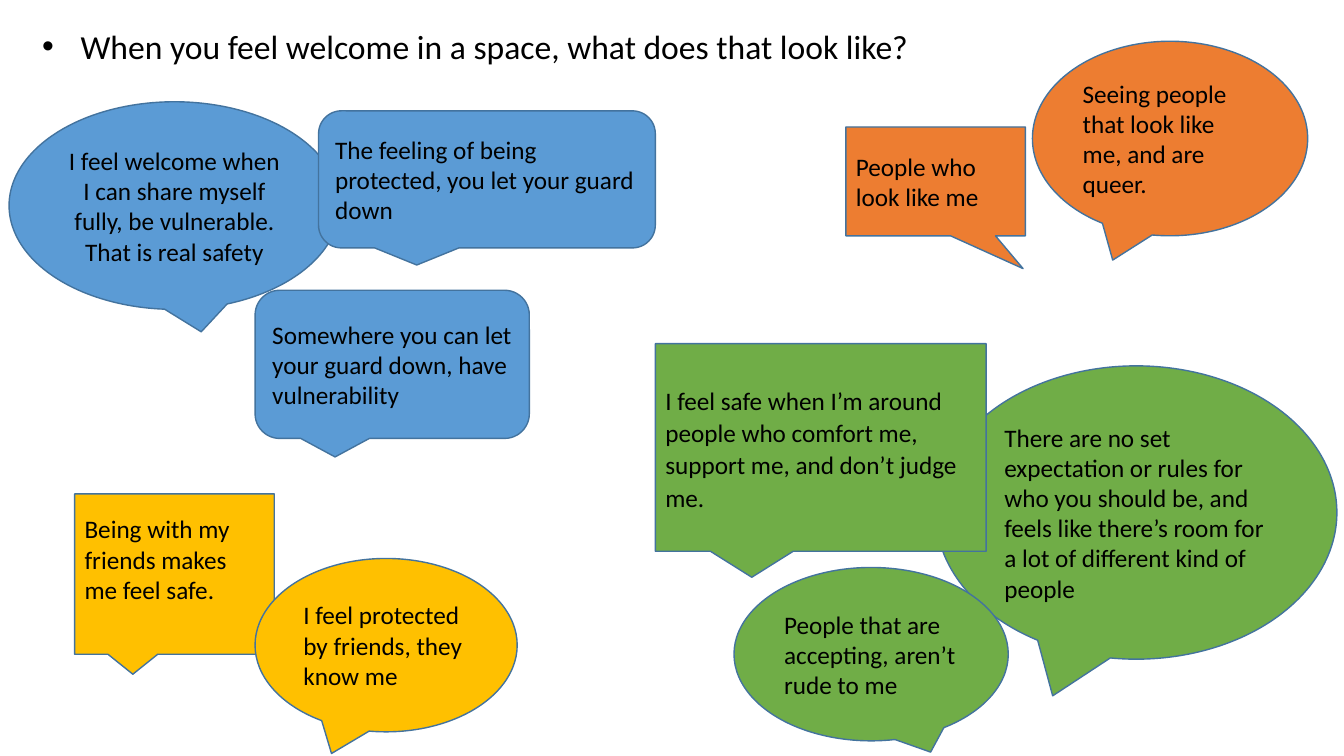
from dataclasses import dataclass

from lxml import etree
from pptx import Presentation
from pptx.dml.color import RGBColor
from pptx.enum.shapes import MSO_SHAPE
from pptx.enum.text import MSO_ANCHOR, PP_ALIGN
from pptx.oxml.ns import qn
from pptx.util import Inches, Pt

RECTANGLE = MSO_SHAPE.RECTANGULAR_CALLOUT
ROUNDED = MSO_SHAPE.ROUNDED_RECTANGULAR_CALLOUT
OVAL = MSO_SHAPE.OVAL_CALLOUT
LEFT, CENTER = PP_ALIGN.LEFT, PP_ALIGN.CENTER
MIDDLE = MSO_ANCHOR.MIDDLE


@dataclass(frozen=True)
class Theme:
    font: str = "Calibri"
    question_size: int = 24
    answer_size: int = 18
    text: str = "000000"
    outline: str = "43739E"
    blue: str = "5B9BD5"
    orange: str = "ED7D31"
    green: str = "70AD47"
    yellow: str = "FFC000"


THEME = Theme()


@dataclass(frozen=True)
class Bubble:
    text: str
    kind: int
    fill: str
    left: float
    top: float
    width: float
    height: float
    tail: tuple[float, float] | None = None  # tip, as a share of the size from the centre
    align: int = LEFT
    line_spacing: float = 1.0
    space_after: int = 0
    bottom_inset: float = 0.05


# Answers, from back to front
BUBBLES = [
    Bubble("Being with my friends makes me feel safe.",
           RECTANGLE, THEME.yellow, 0.74, 4.9, 1.98, 1.59, bottom_inset=0.35),
    Bubble("People who look like me",
           RECTANGLE, THEME.orange, 8.39, 1.26, 1.78, 1.08, tail=(0.487, 0.801)),
    Bubble("There are no set expectation or rules for who you should be, "
           "and feels like there’s room for a lot of different kind of people",
           OVAL, THEME.green, 9.28, 3.63, 3.98, 2.91, space_after=8),
    Bubble("I feel protected by friends, they know me",
           OVAL, THEME.yellow, 2.53, 5.54, 2.6, 1.72, space_after=8),
    Bubble("Seeing people that look like me, and are queer.",
           OVAL, THEME.orange, 10.24, 0.41, 2.73, 1.93),
    Bubble("Somewhere you can let your guard down, have vulnerability",
           ROUNDED, THEME.blue, 2.53, 2.88, 2.72, 1.47),
    Bubble("I feel welcome when I can share myself fully, be vulnerable. "
           "That is real safety",
           OVAL, THEME.blue, 0.09, 1.01, 3.28, 2.06, tail=(0.081, 0.608), align=CENTER),
    Bubble("I feel safe when I’m around people who comfort me, support me, "
           "and don’t judge me.",
           RECTANGLE, THEME.green, 6.5, 3.41, 3.28, 2.06, line_spacing=1.07),
    Bubble("People that are accepting, aren’t rude to me",
           OVAL, THEME.green, 7.28, 5.63, 2.72, 1.72, tail=(0.217, 0.565)),
    Bubble("The feeling of being protected, you let your guard down",
           ROUNDED, THEME.blue, 3.16, 1.1, 3.34, 1.36),
]


def write_text(frame, text: str, *, size: int, align: int = LEFT,
               line_spacing: float = 1.0, space_after: int = 0):
    """Put one formatted paragraph in the frame and return it."""
    frame.word_wrap = True
    para = frame.paragraphs[0]
    para.alignment = align
    para.line_spacing = line_spacing
    para.space_after = Pt(space_after)
    span = para.add_run()
    span.text = text
    span.font.name = THEME.font
    span.font.size = Pt(size)
    span.font.color.rgb = RGBColor.from_string(THEME.text)
    return para


def add_bullet(para, indent: float) -> None:
    """Give the paragraph a hanging round bullet."""
    properties = para._p.get_or_add_pPr()
    properties.set("marL", str(Inches(indent)))
    properties.set("indent", str(-Inches(indent)))
    etree.SubElement(properties, qn("a:buFont")).set("typeface", "Arial")
    etree.SubElement(properties, qn("a:buChar")).set("char", "•")


def add_question(page, text: str) -> None:
    box = page.shapes.add_textbox(Inches(0.32), Inches(0.18), Inches(11.25), Inches(0.51))
    para = write_text(box.text_frame, text, size=THEME.question_size,
                      line_spacing=1.07, space_after=8)
    add_bullet(para, 0.38)


def add_bubble(page, bubble: Bubble) -> None:
    shape = page.shapes.add_shape(bubble.kind, Inches(bubble.left), Inches(bubble.top),
                                  Inches(bubble.width), Inches(bubble.height))
    shape.shadow.inherit = False
    shape.fill.solid()
    shape.fill.fore_color.rgb = RGBColor.from_string(bubble.fill)
    shape.line.color.rgb = RGBColor.from_string(THEME.outline)
    shape.line.width = Pt(1)
    if bubble.tail:
        shape.adjustments[0], shape.adjustments[1] = bubble.tail
    frame = shape.text_frame
    frame.vertical_anchor = MIDDLE
    frame.margin_bottom = Inches(bubble.bottom_inset)
    write_text(frame, bubble.text, size=THEME.answer_size, align=bubble.align,
               line_spacing=bubble.line_spacing, space_after=bubble.space_after)


def main() -> None:
    deck = Presentation()
    deck.slide_width, deck.slide_height = Inches(13.33), Inches(7.5)
    page = deck.slides.add_slide(deck.slide_layouts[6])
    add_question(page, "When you feel welcome in a space, what does that look like?")
    for bubble in BUBBLES:
        add_bubble(page, bubble)
    deck.save("out.pptx")


if __name__ == "__main__":
    main()
